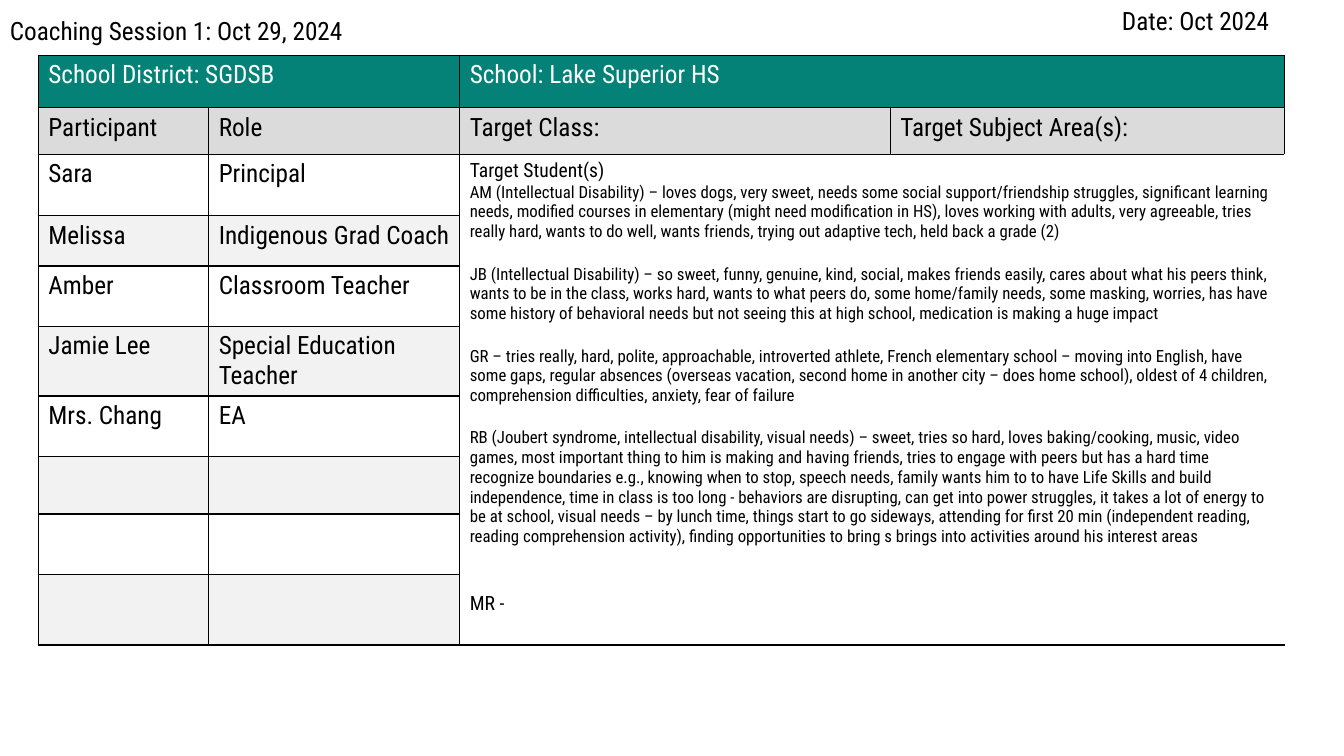
from pptx import Presentation
from pptx.util import Inches, Pt
from pptx.dml.color import RGBColor as RGB
from pptx.enum.text import MSO_AUTO_SIZE as Auto
from pptx.oxml import parse_xml
from pptx.oxml.ns import nsdecls
from dataclasses import dataclass

# Content
LABELS = [
    ("Coaching Session 1: Oct 29, 2024", 0, 0.1, 3.61),
    ("Date: Oct 2024", 11.03, 0, 1.7),
]
BANNER = ["School District: SGDSB", "School: Lake Superior HS"]
HEADS = ["Participant", "Role", "Target Class:", "Target Subject Area(s):"]
PEOPLE = [
    ("Sara", "Principal"),
    ("Melissa", "Indigenous Grad Coach"),
    ("Amber", "Classroom Teacher"),
    ("Jamie Lee", "Special Education Teacher"),
    ("Mrs. Chang", "EA"),
    ("", ""), ("", ""), ("", ""),
]
# Each note: text, size name, blank lines of space above
NOTES = [
    ("Target Student(s)", "mid", 0),
    ("AM (Intellectual Disability) – loves dogs, very sweet, needs some social support/friendship struggles, "
     "significant learning needs, modified courses in elementary (might need modification in HS), loves working "
     "with adults, very agreeable, tries really hard, wants to do well, wants friends, trying out adaptive tech, "
     "held back a grade (2)", "small", 0),
    ("JB (Intellectual Disability) – so sweet, funny, genuine, kind, social, makes friends easily, cares about "
     "what his peers think, wants to be in the class, works hard, wants to what peers do, some home/family needs, "
     "some masking, worries, has have some history of behavioral needs but not seeing this at high school, "
     "medication is making a huge impact", "small", 1),
    ("GR – tries really, hard, polite, approachable, introverted athlete, French elementary school – moving into "
     "English, have some gaps, regular absences (overseas vacation, second home in another city – does home "
     "school), oldest of 4 children, comprehension difficulties, anxiety, fear of failure", "small", 1),
    ("RB (Joubert syndrome, intellectual disability, visual needs) – sweet, tries so hard, loves baking/cooking, "
     "music, video games, most important thing to him is making and having friends, tries to engage with peers "
     "but has a hard time recognize boundaries e.g., knowing when to stop, speech needs, family wants him to to "
     "have Life Skills and build independence, time in class is too long - behaviors are disrupting, can get into "
     "power struggles, it takes a lot of energy to be at school, visual needs – by lunch time, things start to go "
     "sideways, attending for first 20 min (independent reading, reading comprehension activity), finding "
     "opportunities to bring s brings into activities around his interest areas", "small", 1),
    ("MR -", "mid", 2),
]
COLS = [1.69, 2.49, 4.27, 3.91]
ROWS = [0.52, 0.46, 0.61, 0.5, 0.6, 0.69, 0.6, 0.57, 0.6, 0.7]


@dataclass
class Theme:
    font: str = "Roboto Condensed"
    teal: str = "058278"
    gray: str = "DBDBDB"
    pale: str = "F2F2F2"
    white: str = "FFFFFF"
    black: str = "000000"
    big: int = 18
    mid: int = 14
    small: int = 12
    gap: float = 16.4


T = Theme()


def write(para, text, size=T.big, color=T.black):
    run = para.add_run()
    run.text = text
    font = run.font
    font.name, font.size = T.font, Pt(size)
    font.color.rgb = RGB.from_string(color)


def paint(cell, fill, right=T.black):
    cell.fill.solid()
    cell.fill.fore_color.rgb = RGB.from_string(fill)
    props = cell._tc.get_or_add_tcPr()
    for i, side in enumerate("LRTB"):
        color = right if side == "R" else T.black
        props.insert(i, parse_xml(
            f'<a:ln{side} {nsdecls("a")} w="12700"><a:solidFill>'
            f'<a:srgbClr val="{color}"/></a:solidFill></a:ln{side}>'))


def fill_cell(cell, text, fill, color=T.black):
    paint(cell, fill)
    if text:
        write(cell.text_frame.paragraphs[0], text, color=color)


deck = Presentation()
deck.slide_width, deck.slide_height = Inches(13.33), Inches(7.5)
slide = deck.slides.add_slide(deck.slide_layouts[6])

# Table grid
grid = slide.shapes.add_table(
    len(ROWS), len(COLS), Inches(0.38), Inches(0.55),
    Inches(sum(COLS)), Inches(sum(ROWS))).table
for col, width in zip(grid.columns, COLS):
    col.width = Inches(width)
for row, height in zip(grid.rows, ROWS):
    row.height = Inches(height)

# Banner and heads
for i, text in enumerate(BANNER):
    left, right = grid.cell(0, 2 * i), grid.cell(0, 2 * i + 1)
    left.merge(right)
    fill_cell(left, text, T.teal, T.white)
    paint(right, T.teal)
for c, text in enumerate(HEADS):
    fill_cell(grid.cell(1, c), text, T.gray)

# Participants, in bands
for r, pair in enumerate(PEOPLE, 2):
    for c, text in enumerate(pair):
        fill_cell(grid.cell(r, c), text, T.pale if r % 2 else T.white)

# Student notes
notes = grid.cell(2, 2)
notes.merge(grid.cell(len(ROWS) - 1, 3))
for r in range(2, len(ROWS)):
    for c in (2, 3):
        paint(grid.cell(r, c), T.white, T.white)
frame = notes.text_frame
for i, (text, size, blanks) in enumerate(NOTES):
    para = frame.add_paragraph() if i else frame.paragraphs[0]
    para.space_before = Pt(blanks * T.gap)
    write(para, text, getattr(T, size))

# Labels above the table
for text, x, y, width in LABELS:
    frame = slide.shapes.add_textbox(
        Inches(x), Inches(y), Inches(width), Inches(0.4)).text_frame
    frame.word_wrap = False
    frame.auto_size = Auto.SHAPE_TO_FIT_TEXT
    write(frame.paragraphs[0], text)

deck.save("out.pptx")
